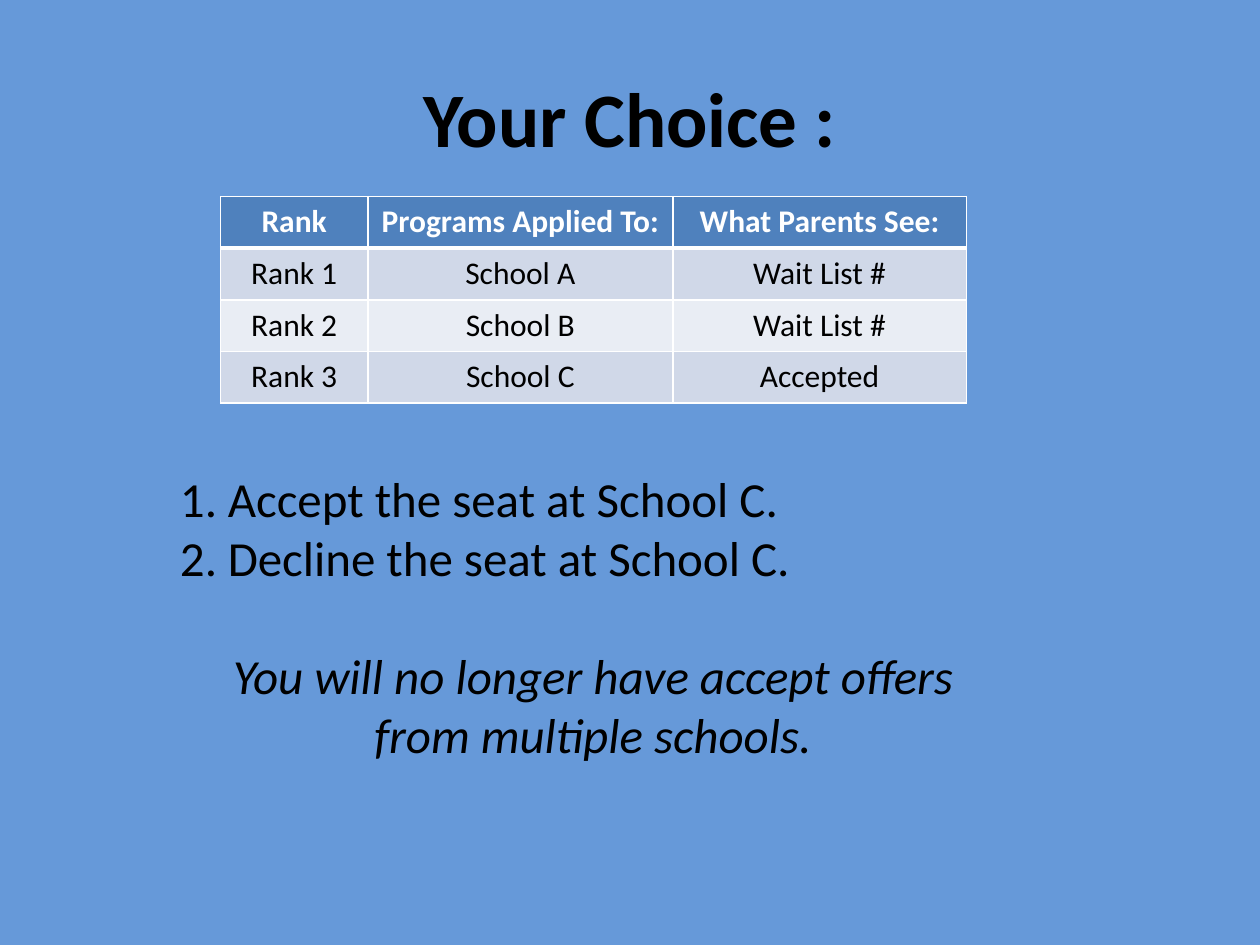
from lxml import etree
from pptx import Presentation
from pptx import util as u
from pptx.dml.color import RGBColor
from pptx.enum import text
from pptx.oxml import ns

FONT = "Calibri"
SKY = RGBColor(0x66, 0x99, 0xD9)
HEADER = RGBColor(0x4F, 0x81, 0xBD)
BANDS = (RGBColor(0xE9, 0xED, 0xF4), RGBColor(0xD0, 0xD8, 0xE8))
BLACK = RGBColor(0, 0, 0)
WHITE = RGBColor(0xFF, 0xFF, 0xFF)

COLUMN_WIDTHS = (1.17, 2.42, 2.33)
ROW_HEIGHT = 0.41
RANKINGS = (
    ("Rank", "Programs Applied To:", "What Parents See:"),
    ("Rank 1", "School A", "Wait List #"),
    ("Rank 2", "School B", "Wait List #"),
    ("Rank 3", "School C", "Accepted"),
)
OPTIONS = ("Accept the seat at School C.", "Decline the seat at School C.")
NOTICE = "You will no longer have accept offers from multiple schools."


def write(paragraph, words, size, color=BLACK, bold=False, italic=False,
          align=text.PP_ALIGN.CENTER, before=0):
    """Put formatted words into a paragraph."""
    paragraph.alignment = align
    paragraph.space_before = u.Pt(before)
    run = paragraph.add_run()
    run.text = words
    font = run.font
    font.name, font.size = FONT, u.Pt(size)
    font.bold, font.italic = bold, italic
    font.color.rgb = color


def number(paragraph, indent):
    """Give a paragraph an automatic number with a hanging indent."""
    properties = paragraph._p.get_or_add_pPr()
    properties.set("marL", str(u.Inches(indent)))
    properties.set("indent", str(-u.Inches(indent)))
    etree.SubElement(properties, ns.qn("a:buAutoNum"), type="arabicPeriod")


def add_frame(slide, left, top, width, height):
    """Add a wrapping text box and return its text frame."""
    box = slide.shapes.add_textbox(*map(u.Inches, (left, top, width, height)))
    box.text_frame.word_wrap = True
    return box.text_frame


def draw_borders(cell, bottom, top):
    """Draw white lines around a table cell."""
    properties = cell._tc.get_or_add_tcPr()
    widths = {"a:lnL": 1, "a:lnR": 1, "a:lnT": top, "a:lnB": bottom}
    for place, (side, width) in enumerate(widths.items()):
        line = etree.Element(ns.qn(side), w=str(u.Pt(width)))
        fill = etree.SubElement(line, ns.qn("a:solidFill"))
        etree.SubElement(fill, ns.qn("a:srgbClr"), val=str(WHITE))
        properties.insert(place, line)


def add_rankings(slide, left, top):
    """Add the table of ranked programs and their results."""
    table = slide.shapes.add_table(
        len(RANKINGS), len(COLUMN_WIDTHS), u.Inches(left), u.Inches(top),
        u.Inches(sum(COLUMN_WIDTHS)), u.Inches(ROW_HEIGHT * len(RANKINGS))).table
    for column, width in zip(table.columns, COLUMN_WIDTHS):
        column.width = u.Inches(width)
    for r, entries in enumerate(RANKINGS):
        heading = r == 0
        for c, entry in enumerate(entries):
            cell = table.cell(r, c)
            cell.fill.solid()
            cell.fill.fore_color.rgb = HEADER if heading else BANDS[r % 2]
            draw_borders(cell, bottom=3 if heading else 1, top=3 if r == 1 else 1)
            write(cell.text_frame.paragraphs[0], entry, 18,
                  color=WHITE if heading else BLACK, bold=heading)


def add_options(slide):
    """Add the numbered options and the notice below them."""
    frame = add_frame(slide, 1.33, 3.67, 6.75, 2.46)
    frame.auto_size = text.MSO_AUTO_SIZE.SHAPE_TO_FIT_TEXT
    for i, option in enumerate(OPTIONS):
        paragraph = frame.add_paragraph() if i else frame.paragraphs[0]
        write(paragraph, option, 28, align=text.PP_ALIGN.LEFT)
        number(paragraph, 0.38)
    write(frame.add_paragraph(), NOTICE, 28, italic=True, before=34)


def main():
    """Build and save the slide."""
    deck = Presentation()
    deck.slide_width, deck.slide_height = u.Inches(10), u.Inches(7.5)
    slide = deck.slides.add_slide(deck.slide_layouts[6])
    slide.background.fill.solid()
    slide.background.fill.fore_color.rgb = SKY
    title = add_frame(slide, 0.5, 0.3, 9, 1.25)
    title.vertical_anchor = text.MSO_ANCHOR.MIDDLE
    write(title.paragraphs[0], "Your Choice :", 44, bold=True)
    add_rankings(slide, 1.75, 1.56)
    add_options(slide)
    deck.save("out.pptx")


if __name__ == "__main__":
    main()
